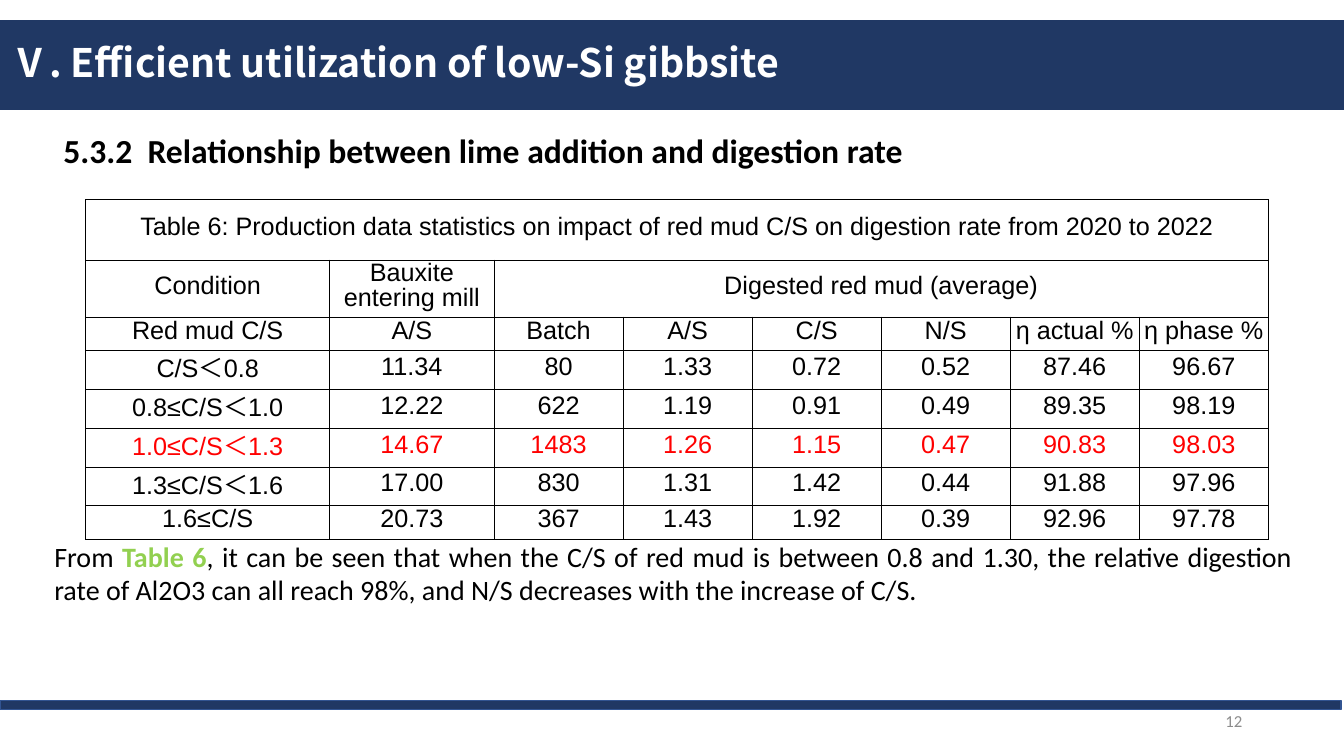
import dataclasses

import pptx
import pptx.dml.color
import pptx.enum.shapes
import pptx.enum.text
import pptx.oxml
import pptx.oxml.ns
import pptx.util

Inches = pptx.util.Inches
Align = pptx.enum.text.PP_ALIGN
Anchor = pptx.enum.text.MSO_ANCHOR

NAVY = "203864"
BLACK = "000000"
RED = "FF0000"
CJK_FONT = "Noto Sans CJK SC"


@dataclasses.dataclass(frozen=True)
class Box:
    left: float
    top: float
    width: float
    height: float

    def lengths(self) -> tuple:
        return tuple(Inches(value) for value in dataclasses.astuple(self))


@dataclasses.dataclass(frozen=True)
class Style:
    font: str
    size: int
    color: str = BLACK
    bold: bool = False


@dataclasses.dataclass(frozen=True)
class Piece:
    text: str
    style: Style


@dataclasses.dataclass(frozen=True)
class TextBlock:
    box: Box
    pieces: tuple[Piece, ...]
    align: Align = Align.LEFT
    anchor: Anchor = Anchor.TOP


@dataclasses.dataclass(frozen=True)
class Band:
    box: Box
    line: str | None = None


BANDS = (
    Band(Box(0, 6.95, 13.3, 0.09), "325491"),
    Band(Box(0, 0.2, 13.33, 0.89)),
)

TITLE = TextBlock(
    Box(0, -0.08, 11.5, 1.45),
    (Piece("Ⅴ. Efficient utilization of low-Si gibbsite", Style(CJK_FONT, 28, "FFFFFF", True)),),
    anchor=Anchor.MIDDLE,
)

BODY = Style("Calibri", 20)
TEXT_BLOCKS = (
    TextBlock(
        Box(9.42, 6.95, 3, 0.4),
        (Piece("12", Style("Calibri", 12, "8C8C8C")),),
        Align.RIGHT,
        Anchor.MIDDLE,
    ),
    TextBlock(
        Box(0.44, 5.3, 12.48, 1.03),
        (
            Piece("From ", BODY),
            Piece("Table 6", Style("Calibri", 20, "92D050", True)),
            Piece(
                ", it can be seen that when the C/S of red mud is between 0.8 and 1.30, "
                "the relative digestion rate of Al2O3 can all reach 98%, "
                "and N/S decreases with the increase of C/S.",
                BODY,
            ),
        ),
        Align.JUSTIFY,
    ),
    TextBlock(
        Box(0.53, 1.24, 9.21, 0.5),
        (Piece("5.3.2  Relationship between lime addition and digestion rate",
               Style("Calibri", 24, BLACK, True)),),
    ),
)

TABLE_BOX = Box(0.85, 1.98, 11.73, 3.2)
COLUMN_WIDTHS = (2.42, 1.63) + (1.28,) * 6
ROW_HEIGHTS = (0.6,) + (0.33,) * 7
HIGHLIGHTED_ROW = 5
TABLE_ROWS = (
    ("Table 6: Production data statistics on impact of red mud C/S on digestion rate from 2020 to 2022",),
    ("Condition", "Bauxite entering mill", "Digested red mud (average)"),
    ("Red mud C/S", "A/S", "Batch", "A/S", "C/S", "N/S", "η actual %", "η phase %"),
    ("C/S＜0.8", "11.34", "80", "1.33", "0.72", "0.52", "87.46", "96.67"),
    ("0.8≤C/S＜1.0", "12.22", "622", "1.19", "0.91", "0.49", "89.35", "98.19"),
    ("1.0≤C/S＜1.3", "14.67", "1483", "1.26", "1.15", "0.47", "90.83", "98.03"),
    ("1.3≤C/S＜1.6", "17.00", "830", "1.31", "1.42", "0.44", "91.88", "97.96"),
    ("1.6≤C/S", "20.73", "367", "1.43", "1.92", "0.39", "92.96", "97.78"),
)


def rgb(color: str) -> pptx.dml.color.RGBColor:
    return pptx.dml.color.RGBColor.from_string(color)


def format_run(run, style: Style) -> None:
    run.font.name = style.font
    run.font.size = pptx.util.Pt(style.size)
    run.font.bold = style.bold
    run.font.color.rgb = rgb(style.color)
    latin = run.font._element.find(pptx.oxml.ns.qn("a:latin"))
    latin.addnext(pptx.oxml.parse_xml(
        f'<a:ea {pptx.oxml.ns.nsdecls("a")} typeface="{CJK_FONT}"/>'))


def fill_text(shape, block: TextBlock) -> None:
    shape.left, shape.top, shape.width, shape.height = block.box.lengths()
    text_frame = shape.text_frame
    text_frame.word_wrap = True
    text_frame.auto_size = pptx.enum.text.MSO_AUTO_SIZE.NONE
    text_frame.vertical_anchor = block.anchor
    paragraph = text_frame.paragraphs[0]
    paragraph.alignment = block.align
    for piece in block.pieces:
        run = paragraph.add_run()
        run.text = piece.text
        format_run(run, piece.style)


def draw_band(slide, band: Band) -> None:
    shape = slide.shapes.add_shape(
        pptx.enum.shapes.MSO_SHAPE.RECTANGLE, *band.box.lengths())
    shape.shadow.inherit = False
    shape.fill.solid()
    shape.fill.fore_color.rgb = rgb(NAVY)
    if band.line:
        shape.line.color.rgb = rgb(band.line)
        shape.line.width = pptx.util.Pt(1)
    else:
        shape.line.fill.background()


def format_cell(cell) -> None:
    cell.margin_left = cell.margin_right = cell.margin_top = Inches(0.01)
    cell.margin_bottom = Inches(0.05)
    cell.vertical_anchor = Anchor.MIDDLE
    properties = cell._tc.get_or_add_tcPr()
    for side in ("lnL", "lnR", "lnT", "lnB"):
        properties.append(pptx.oxml.parse_xml(
            f'<a:{side} {pptx.oxml.ns.nsdecls("a")} w="{pptx.util.Pt(0.5)}">'
            f'<a:solidFill><a:srgbClr val="{BLACK}"/></a:solidFill></a:{side}>'))
    cell.fill.background()


def draw_table(slide) -> None:
    table = slide.shapes.add_table(
        len(ROW_HEIGHTS), len(COLUMN_WIDTHS), *TABLE_BOX.lengths()).table
    table.first_row = False
    table.horz_banding = False
    for column, width in zip(table.columns, COLUMN_WIDTHS):
        column.width = Inches(width)
    for row, height in zip(table.rows, ROW_HEIGHTS):
        row.height = Inches(height)
    for cell in table.iter_cells():
        format_cell(cell)
    last_column = len(COLUMN_WIDTHS) - 1
    for row_index, texts in enumerate(TABLE_ROWS):
        style = Style("Arial", 18, RED if row_index == HIGHLIGHTED_ROW else BLACK)
        if len(texts) <= last_column:
            table.cell(row_index, len(texts) - 1).merge(table.cell(row_index, last_column))
        for column_index, text in enumerate(texts):
            paragraph = table.cell(row_index, column_index).text_frame.paragraphs[0]
            paragraph.text = text
            paragraph.alignment = Align.CENTER
            paragraph.line_spacing = 0.9
            format_run(paragraph.runs[0], style)


def main() -> None:
    presentation = pptx.Presentation()
    presentation.slide_width = Inches(13.33)
    presentation.slide_height = Inches(7.5)
    slide = presentation.slides.add_slide(presentation.slide_layouts.get_by_name("Title Only"))
    for band in BANDS:
        draw_band(slide, band)
    title = slide.shapes.title
    slide.shapes.element.append(title.element)
    fill_text(title, TITLE)
    title.text_frame.paragraphs[0].line_spacing = 0.9
    for block in TEXT_BLOCKS:
        fill_text(slide.shapes.add_textbox(*block.box.lengths()), block)
    draw_table(slide)
    presentation.save("out.pptx")


if __name__ == "__main__":
    main()
